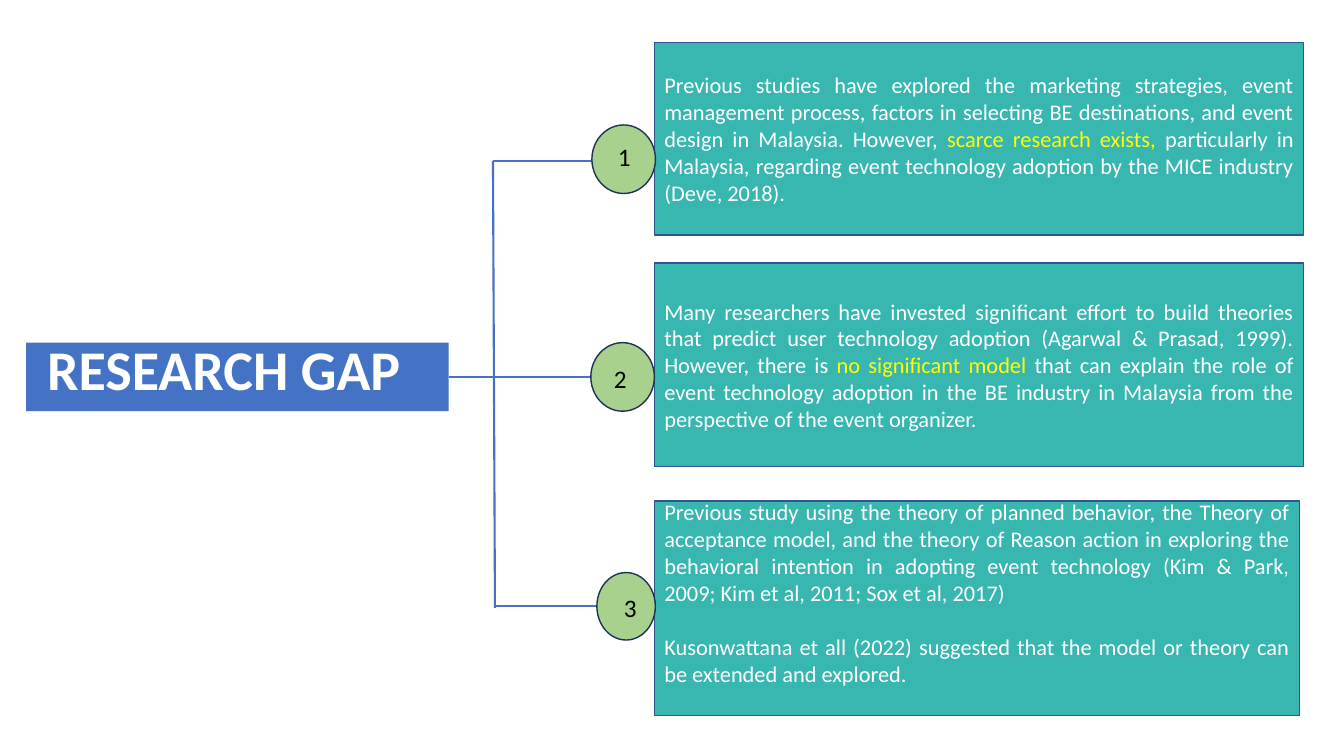
"""Build the research gap slide: a title branching to three numbered cards."""
from dataclasses import dataclass

from lxml import etree
from pptx import Presentation
from pptx.dml.color import RGBColor
from pptx.enum.shapes import MSO_CONNECTOR, MSO_SHAPE
from pptx.enum.text import MSO_ANCHOR, PP_ALIGN
from pptx.oxml.ns import qn
from pptx.util import Inches, Pt

RECTANGLE, OVAL = MSO_SHAPE.RECTANGLE, MSO_SHAPE.OVAL
STRAIGHT = MSO_CONNECTOR.STRAIGHT
TOP, MIDDLE = MSO_ANCHOR.TOP, MSO_ANCHOR.MIDDLE
CENTER, JUSTIFY = PP_ALIGN.CENTER, PP_ALIGN.JUSTIFY
RIGHT_SIDE = 3


@dataclass(frozen=True)
class Theme:
    font: str = "Calibri"
    card: str = "38B6B0"
    card_line: str = "325491"
    accent: str = "4472C4"
    badge: str = "A9D18E"
    badge_line: str = "1E3256"
    white: str = "FFFFFF"
    highlight: str = "FFFF00"
    black: str = "000000"
    title_size: int = 40
    body_size: int = 16
    number_size: int = 18
    thin: float = 1
    thick: float = 1.5


THEME = Theme()
WIDTH, HEIGHT = Inches(13.33), Inches(7.5)

# All lengths below are percentages of the slide's width and height.
TITLE = "RESEARCH GAP"
TITLE_AREA = (1.95, 45.33, 31.43, 9.07)
CARD_LEFT = 48.69
NUMBER_SIZE = (2.4, 5)

CARDS = [
    {
        "area": (CARD_LEFT, 5.6, 48.31, 25.47),
        "badge": (44.04, 16.53, 4.73, 9.07),
        "number_center": (46.44, 20.73),
        "bottom": 0.05,
        "text": [[
            ("Previous studies have explored the marketing strategies, event management process, "
             "factors in selecting BE destinations, and event design in Malaysia. However, ", THEME.white),
            ("scarce research exists, ", THEME.highlight),
            ("particularly in Malaysia, regarding event technology adoption by the MICE industry "
             "(Deve, 2018).", THEME.white),
        ]],
    },
    {
        "area": (CARD_LEFT, 34.8, 48.31, 26.93),
        "badge": (43.96, 45.33, 4.73, 9.07),
        "number_center": (46.14, 50.1),
        "bottom": 0.05,
        "text": [[
            ("Many researchers have invested significant effort to build theories that predict user "
             "technology adoption (Agarwal & Prasad, 1999). However, there is ", THEME.white),
            ("no significant model ", THEME.highlight),
            ("that can explain the role of event technology adoption in the BE industry in Malaysia "
             "from the perspective of the event organizer.", THEME.white),
        ]],
    },
    {
        "area": (CARD_LEFT, 66.27, 48.01, 28.4),
        "badge": (44.41, 75.73, 4.35, 8.93),
        "number_center": (46.89, 80.4),
        "bottom": 0.31,
        "text": [
            [("Previous study using the theory of planned behavior, the Theory of acceptance model, "
              "and the theory of Reason action in exploring the behavioral intention in adopting event "
              "technology (Kim & Park, 2009; Kim et al, 2011; Sox et al, 2017)", THEME.white)],
            [("Kusonwattana et all (2022) suggested that the model or theory can be extended and "
              "explored.", THEME.white)],
        ],
    },
]

SPINE = (36.68, 21.33, 36.83, 80.4)
HUB = (36.61, TITLE_AREA[1] + TITLE_AREA[3] / 2)
BRANCHES = [
    (36.68, 21.33, 45.24, 21.33),
    (*HUB, CARD_LEFT, HUB[1]),
    (36.83, 80.13, 47.94, 80.13),
]


def place(area):
    """Turn percentages of the slide into lengths."""
    return [round(share * full / 100) for share, full in zip(area, (WIDTH, HEIGHT) * 2)]


def add_block(page, kind, area, fill, line=None):
    block = page.shapes.add_shape(kind, *place(area))
    block.shadow.inherit = False
    block.fill.solid()
    block.fill.fore_color.rgb = RGBColor.from_string(fill)
    if line:
        block.line.color.rgb = RGBColor.from_string(line)
        block.line.width = Pt(THEME.thin)
    else:
        block.line.fill.background()
    return block


def write(box, paragraphs, *, size, align, anchor=MIDDLE, bold=False, spacing=None,
          gap=0, margins=(0.1, 0.05, 0.1, 0.05)):
    """Fill a box with paragraphs, each a list of (text, colour) spans."""
    frame = box.text_frame
    frame.word_wrap = True
    frame.vertical_anchor = anchor
    (frame.margin_left, frame.margin_top,
     frame.margin_right, frame.margin_bottom) = map(Inches, margins)
    for index, spans in enumerate(paragraphs):
        para = frame.add_paragraph() if index else frame.paragraphs[0]
        para.alignment = align
        if spacing:
            para.line_spacing = spacing
        if index:
            para.space_before = Pt(gap)
        for text, color in spans:
            span = para.add_run()
            span.text = text
            span.font.name = THEME.font
            span.font.size = Pt(size)
            span.font.bold = bold
            span.font.color.rgb = RGBColor.from_string(color)


def add_line(page, ends, arrow=False):
    line = page.shapes.add_connector(STRAIGHT, *place(ends))
    line.line.color.rgb = RGBColor.from_string(THEME.accent)
    line.line.width = Pt(THEME.thick)
    if arrow:
        etree.SubElement(line.line._get_or_add_ln(), qn("a:tailEnd"), type="triangle")
    etree.SubElement(line._element.spPr, qn("a:effectLst"))
    return line


def add_card(page, card):
    box = add_block(page, RECTANGLE, card["area"], THEME.card, THEME.card_line)
    top = 0.05 if len(card["text"]) == 1 else 0
    write(box, card["text"], size=THEME.body_size, align=JUSTIFY,
          gap=THEME.body_size * 1.22, margins=(0.1, top, 0.1, card["bottom"]))


def add_badge(page, number, card):
    add_block(page, OVAL, card["badge"], THEME.badge, THEME.badge_line)
    corner = [middle - size / 2 for middle, size in zip(card["number_center"], NUMBER_SIZE)]
    box = page.shapes.add_textbox(*place((*corner, *NUMBER_SIZE)))
    write(box, [[(str(number), THEME.black)]], size=THEME.number_size,
          align=CENTER, margins=(0, 0, 0, 0))


def main():
    deck = Presentation()
    deck.slide_width, deck.slide_height = WIDTH, HEIGHT
    page = deck.slides.add_slide(deck.slide_layouts[6])
    for card in CARDS:
        add_card(page, card)
    title = add_block(page, RECTANGLE, TITLE_AREA, THEME.accent)
    write(title, [[(TITLE, THEME.white)]], size=THEME.title_size, align=CENTER,
          anchor=TOP, bold=True, spacing=0.8, margins=(0.1, 0.05, 0.37, 0.05))
    add_line(page, SPINE)
    for branch in BRANCHES:
        add_line(page, branch, arrow=True)
    add_line(page, (*HUB, *HUB)).begin_connect(title, RIGHT_SIDE)
    for number, card in enumerate(CARDS, 1):
        add_badge(page, number, card)
    deck.save("out.pptx")


if __name__ == "__main__":
    main()
